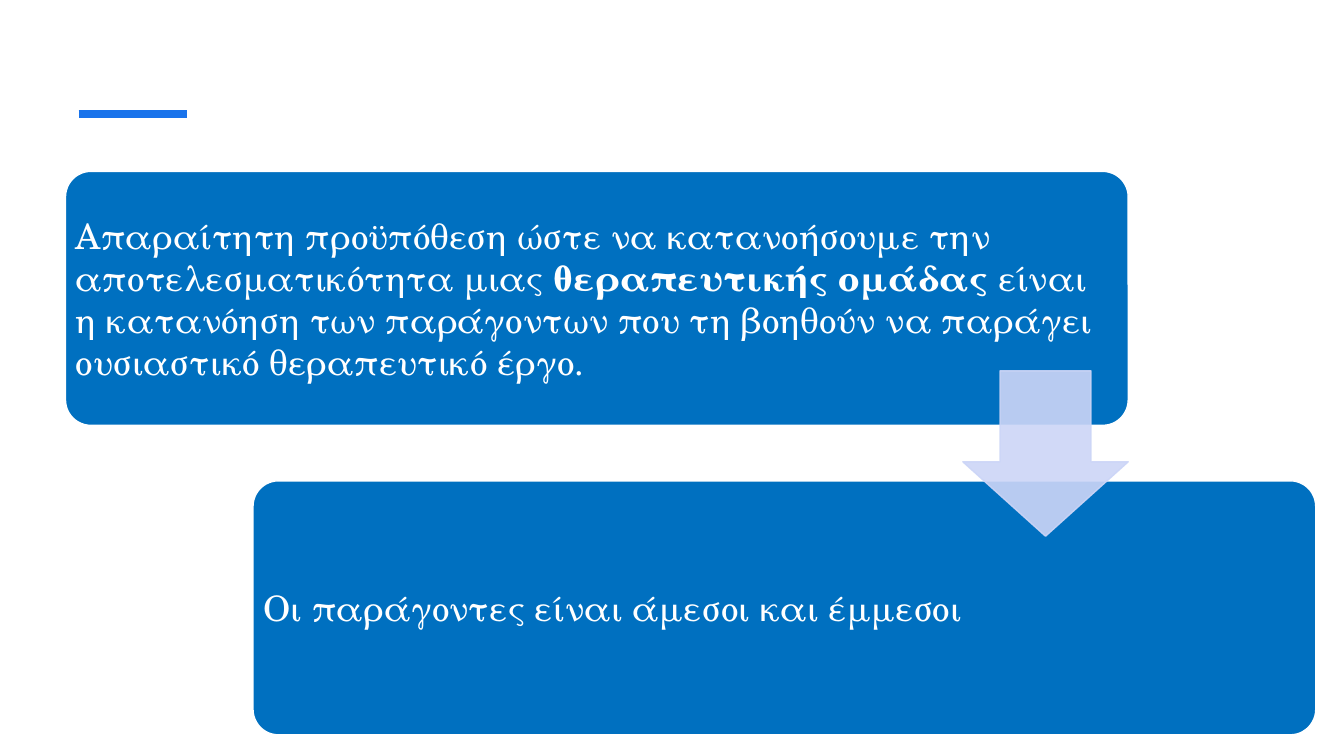
from pptx import Presentation
from pptx import util as u
from pptx.dml.color import RGBColor
from pptx.enum import shapes, text
from pptx.oxml.ns import qn
from lxml import etree


def color(value):
    return RGBColor.from_string(value)


def add_span(para, words, size=25, bold=False, font="TeX Gyre Schola", ink="FFFFFF"):
    span = para.add_run()
    span.text = words
    span.font.size = u.Pt(size)
    span.font.bold = bold
    span.font.name = font
    span.font.color.rgb = color(ink)


class FactorSlide:
    """Holds the style and the current slide and draws its elements."""

    blue, accent, pale, white = "0070C0", "1973EB", "CCD5F7", "FFFFFF"

    def __init__(self, deck):
        self.slide = deck.slides.add_slide(deck.slide_layouts[6])
        self.slide.background.fill.solid()
        self.slide.background.fill.fore_color.rgb = color(self.white)

    def rule(self, left, top, width, weight):
        line = self.slide.shapes.add_connector(
            shapes.MSO_CONNECTOR.STRAIGHT,
            u.Inches(left), u.Inches(top), u.Inches(left + width), u.Inches(top))
        line.line.color.rgb = color(self.accent)
        line.line.width = u.Pt(weight)
        etree.SubElement(line._element.spPr, qn("a:effectLst"))

    def shape(self, kind, left, top, width, height, adjustments, fill, outline):
        shape = self.slide.shapes.add_shape(
            kind, u.Inches(left), u.Inches(top), u.Inches(width), u.Inches(height))
        for index, value in enumerate(adjustments):
            shape.adjustments[index] = value
        shape.shadow.inherit = False
        shape.fill.solid()
        shape.fill.fore_color.rgb = color(fill)
        shape.line.color.rgb = color(outline)
        shape.line.width = u.Pt(1)
        return shape

    def step(self, left, top, spans):
        box = self.shape(shapes.MSO_SHAPE.ROUNDED_RECTANGLE, left, top, 10.54, 2.52,
                         [0.1], self.blue, self.white)
        frame = box.text_frame
        frame.word_wrap = True
        frame.vertical_anchor = text.MSO_ANCHOR.MIDDLE
        frame.margin_left = frame.margin_right = u.Inches(0.03)
        frame.margin_top = frame.margin_bottom = u.Inches(0.03)
        para = frame.paragraphs[0]
        para.alignment = text.PP_ALIGN.LEFT
        for words, bold in spans:
            add_span(para, words, bold=bold)

    def arrow(self, left, top, size):
        arrow = self.shape(shapes.MSO_SHAPE.DOWN_ARROW, left, top, size, size,
                           [0.55, 0.45], self.pale, self.pale)
        for tint in arrow._element.spPr.iter(qn("a:srgbClr")):
            etree.SubElement(tint, qn("a:alpha"), val="90000")


def main():
    deck = Presentation()
    deck.slide_width, deck.slide_height = u.Inches(13.33), u.Inches(7.5)
    page = FactorSlide(deck)
    page.rule(0.78, 1.13, 1.07, 6)
    page.step(0.65, 1.7, [
        ("Απαραίτητη προϋπόθεση ώστε να κατανοήσουμε την αποτελεσματικότητα μιας ", False),
        ("θεραπευτικής ομάδας ", True),
        ("είναι η κατανόηση των παράγοντων που τη βοηθούν να παράγει "
         "ουσιαστικό θεραπευτικό έργο.", False),
    ])
    page.step(2.51, 4.77, [("Οι παράγοντες είναι άμεσοι και έμμεσοι", False)])
    page.arrow(9.55, 3.68, 1.64)
    deck.save("out.pptx")


if __name__ == "__main__":
    main()
